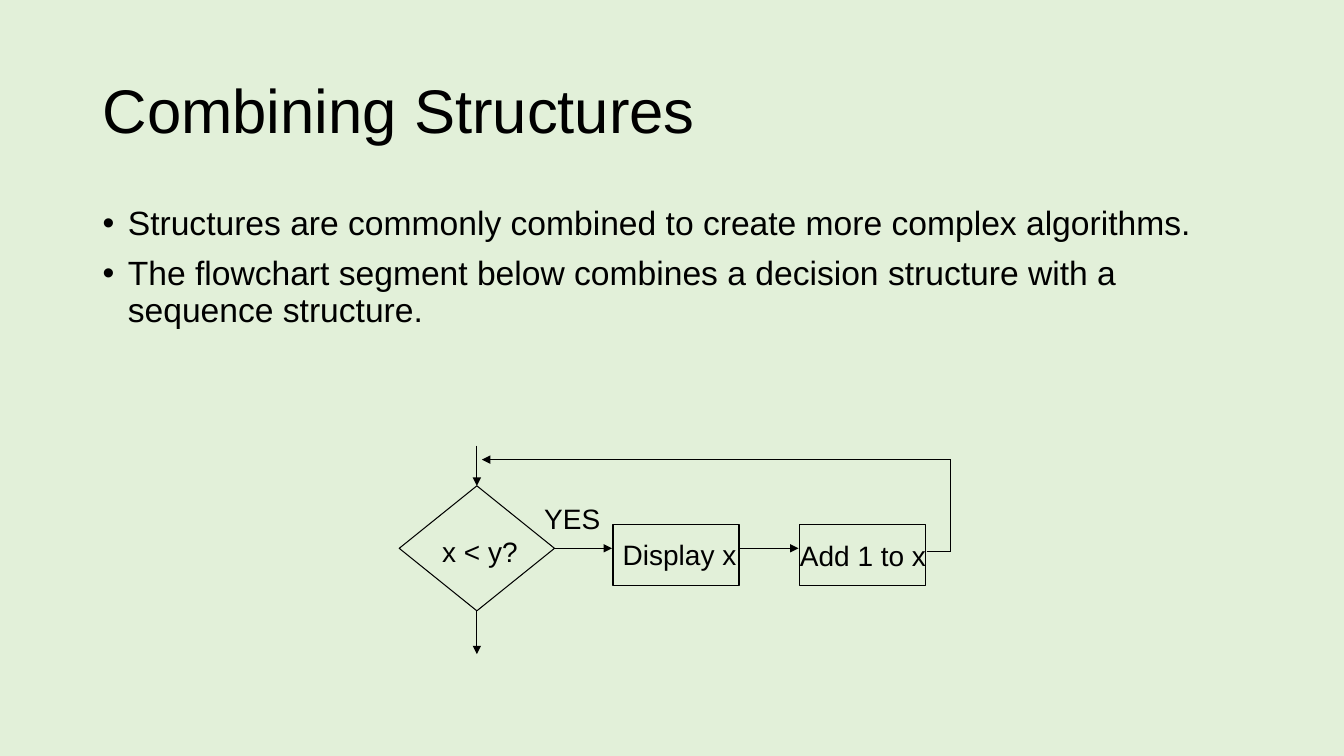
from typing import NamedTuple, Optional

from lxml.etree import SubElement
from pptx import Presentation
from pptx.dml.color import RGBColor
from pptx.enum.shapes import MSO_CONNECTOR as Connector, MSO_SHAPE as Preset
from pptx.enum.text import MSO_ANCHOR as Anchor, PP_ALIGN as Align
from pptx.oxml.ns import qn
from pptx.util import Inches, Pt

COLORS = {"background": "E2F0D9", "ink": "000000"}
FONT = "Arial"
TOP, BOTTOM, RIGHT = 0, 2, 3


class Node(NamedTuple):
    name: str
    preset: Preset
    left: float
    top: float
    width: float
    height: float


class Flow(NamedTuple):
    start: tuple[float, float]
    end: tuple[float, float]
    arrow: bool = True
    begin_side: Optional[int] = None  # side of the decision joined at the start
    end_side: Optional[int] = None  # side of the decision joined at the end


class Label(NamedTuple):
    text: str
    left: float
    top: float
    width: float


NODES = [
    Node("decision", Preset.FLOWCHART_DECISION, 3.96, 4.82, 1.54, 1.24),
    Node("display", Preset.RECTANGLE, 6.08, 5.2, 1.25, 0.61),
    Node("increment", Preset.RECTANGLE, 7.93, 5.2, 1.25, 0.61),
]
FLOWS = [
    Flow((4.73, 4.42), (4.73, 4.82), end_side=TOP),
    Flow((4.73, 6.06), (4.73, 6.49), begin_side=BOTTOM),
    Flow((5.5, 5.44), (6.07, 5.44), begin_side=RIGHT),
    Flow((7.33, 5.44), (7.92, 5.44)),
    # Loop back to the decision
    Flow((9.19, 5.47), (9.43, 5.47), arrow=False),
    Flow((9.43, 5.47), (9.43, 4.56), arrow=False),
    Flow((9.43, 4.56), (4.78, 4.56)),
]
LABELS = [
    Label("x < y?", 4.24, 5.25, 1.04),
    Label("Display x", 6.03, 5.28, 1.42),
    Label("Add 1 to x", 7.83, 5.29, 1.46),
    Label("YES", 5.25, 4.93, 0.85),
]
BULLETS = [
    "Structures are commonly combined to create more complex algorithms.",
    "The flowchart segment below combines a decision structure with a "
    "sequence structure.",
]


def color(name: str) -> RGBColor:
    return RGBColor.from_string(COLORS[name])


def add_text(page, text: str, left: float, top: float, width: float,
             height: float, size: int, wrap: bool = True):
    box = page.shapes.add_textbox(
        Inches(left), Inches(top), Inches(width), Inches(height))
    frame = box.text_frame
    frame.text = text
    frame.word_wrap = wrap
    for para in frame.paragraphs:
        for span in para.runs:
            span.font.name = FONT
            span.font.size = Pt(size)
            span.font.color.rgb = color("ink")
    return frame


def add_bullet(para) -> None:
    para.line_spacing = 0.9
    para.space_before = Pt(10)
    properties = para._p.get_or_add_pPr()
    properties.set("marL", str(Inches(0.25)))
    properties.set("indent", str(-Inches(0.25)))
    SubElement(properties, qn("a:buFont")).set("typeface", FONT)
    SubElement(properties, qn("a:buChar")).set("char", "•")


def style_line(line) -> None:
    line.color.rgb = color("ink")
    line.width = Pt(0.75)


def add_node(page, node: Node):
    shape = page.shapes.add_shape(
        node.preset, Inches(node.left), Inches(node.top),
        Inches(node.width), Inches(node.height))
    shape.shadow.inherit = False
    shape.fill.background()
    style_line(shape.line)
    return shape


def add_flow(page, flow: Flow, decision) -> None:
    points = [Inches(value) for value in flow.start + flow.end]
    connector = page.shapes.add_connector(Connector.STRAIGHT, *points)
    style_line(connector.line)
    if flow.arrow:
        line_xml = connector.line._get_or_add_ln()
        SubElement(line_xml, qn("a:tailEnd")).set("type", "triangle")
    SubElement(connector._element.spPr, qn("a:effectLst"))
    if flow.begin_side is not None:
        connector.begin_connect(decision, flow.begin_side)
    if flow.end_side is not None:
        connector.end_connect(decision, flow.end_side)


def main() -> None:
    deck = Presentation()
    deck.slide_width, deck.slide_height = Inches(13.33), Inches(7.5)
    page = deck.slides.add_slide(deck.slide_layouts[6])
    page.background.fill.solid()
    page.background.fill.fore_color.rgb = color("background")

    # Title and bullets
    title = add_text(page, "Combining Structures", 0.92, 0.4, 11.5, 1.45, 44)
    title.vertical_anchor = Anchor.MIDDLE
    title.paragraphs[0].line_spacing = 0.9
    body = add_text(page, "\n".join(BULLETS), 0.92, 2, 11.5, 4.76, 24)
    for para in body.paragraphs:
        add_bullet(para)

    # Flowchart
    nodes = {node.name: add_node(page, node) for node in NODES}
    for flow in FLOWS:
        add_flow(page, flow, nodes["decision"])
    for label in LABELS:
        frame = add_text(page, *label, height=0.43, size=20, wrap=False)
        frame.paragraphs[0].alignment = Align.CENTER

    deck.save("out.pptx")


if __name__ == "__main__":
    main()
